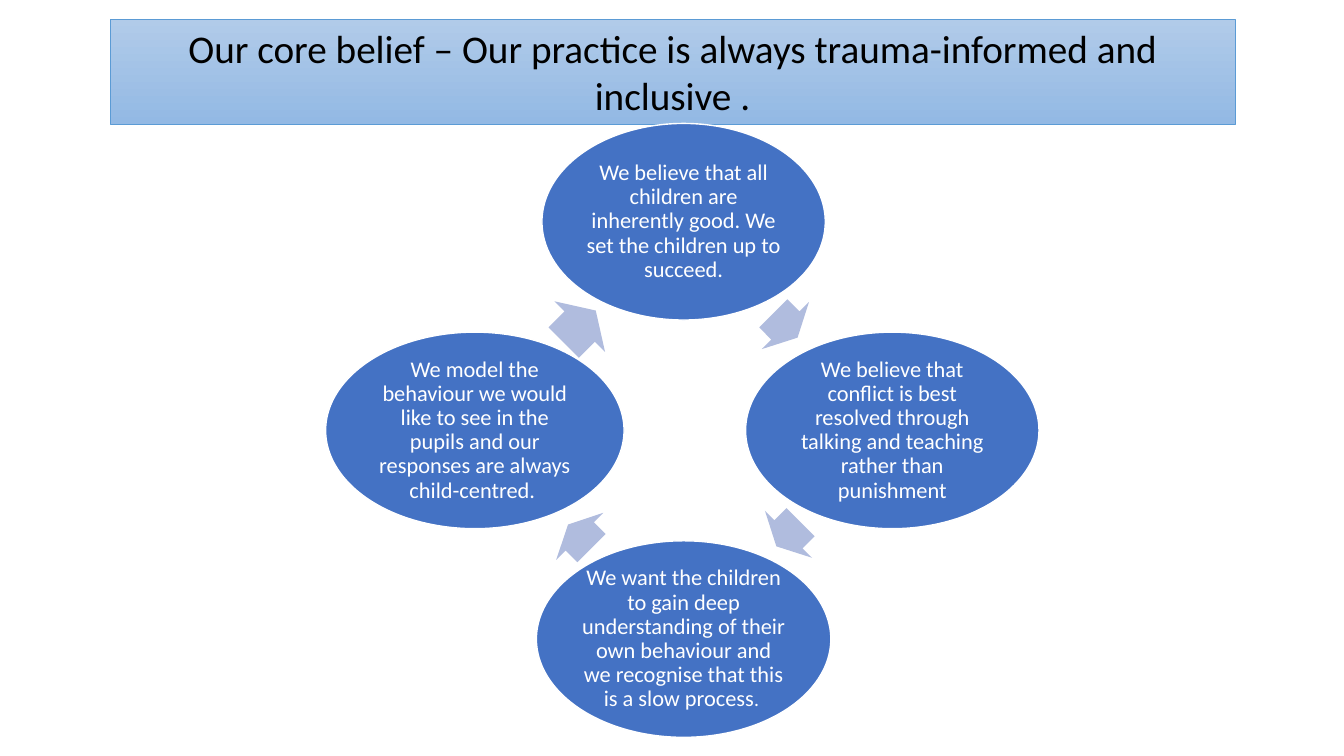
import math
from pptx import Presentation
from pptx.dml.color import RGBColor
from pptx.enum import shapes, text
from pptx.util import Inches, Pt

COLORS = {
    "oval": "4472C4", "arrow": "B0BCDE", "white": "FFFFFF", "black": "000000",
    "edge": "5B9BD5", "top": "B1CBE9", "base": "93B9E4",
}
HUB = (6.78, 4.27)
REACH = 2.07
BELIEFS = [
    (2.81, ["We believe that all children are inherently good. We set the children up to succeed."]),
    (2.91, ["We believe that conflict is best resolved through talking and teaching rather than punishment"]),
    (2.92, ["We want the children to gain deep understanding of their own behaviour and "
            "we recognise that this is a slow process", ". "]),
    (2.96, ["We model the behaviour we would like to see in the pupils and our responses "
            "are always child-centred. "]),
]
ARROWS = [
    (7.79, 3.23, 0.34, 0.66),
    (7.82, 5.3, 0.34, 0.66),
    (5.75, 5.32, 0.33, 0.66),
    (5.75, 3.24, 0.45, 0.71),
]


def tint(name):
    return RGBColor.from_string(COLORS[name])


def write(shape, parts, sizes=(16, 14), color="white", gap=0.9):
    frame = shape.text_frame
    frame.word_wrap = True
    frame.vertical_anchor = text.MSO_ANCHOR.MIDDLE
    para = frame.paragraphs[0]
    para.alignment = text.PP_ALIGN.CENTER
    para.line_spacing = gap
    para.space_before = Pt(0)
    for part, size in zip(parts, sizes):
        run = para.add_run()
        run.text = part
        run.font.name = "Calibri"
        run.font.size = Pt(size)
        run.font.color.rgb = tint(color)


def add_shape(slide, kind, mid, size, fill):
    (x, y), (w, h) = mid, size
    shape = slide.shapes.add_shape(
        kind, Inches(x - w / 2), Inches(y - h / 2), Inches(w), Inches(h))
    shape.shadow.inherit = False
    shape.fill.solid()
    shape.fill.fore_color.rgb = tint(fill)
    return shape


def add_oval(slide, turn, width, parts):
    angle = math.radians(turn)
    mid = HUB[0] + REACH * math.sin(angle), HUB[1] - REACH * math.cos(angle)
    oval = add_shape(slide, shapes.MSO_SHAPE.OVAL, mid, (width, 1.95), "oval")
    oval.line.color.rgb = tint("white")
    oval.line.width = Pt(1)
    frame = oval.text_frame
    frame.margin_left = frame.margin_right = Inches(0.02)
    frame.margin_top = frame.margin_bottom = Inches(0.02)
    write(oval, parts)


def add_arrow(slide, turn, x, y, w, h):
    arrow = add_shape(slide, shapes.MSO_SHAPE.RIGHT_ARROW, (x, y), (w, h), "arrow")
    arrow.line.fill.background()
    arrow.adjustments[0] = 0.6
    arrow.adjustments[1] = 0.5
    arrow.rotation = turn + 45


def set_title(slide):
    title = slide.shapes.title
    title.left, title.top = Inches(1.09), Inches(0.19)
    title.width, title.height = Inches(11.16), Inches(1.04)
    title.fill.gradient()
    title.fill.gradient_angle = 270
    for stop, name, place in zip(title.fill.gradient_stops, ("top", "base"), (0, 1)):
        stop.color.rgb = tint(name)
        stop.position = place
    title.line.color.rgb = tint("edge")
    title.line.width = Pt(0.5)
    title.text_frame.auto_size = text.MSO_AUTO_SIZE.SHAPE_TO_FIT_TEXT
    write(title, ["Our core belief – Our practice is always trauma-informed and inclusive ."],
          sizes=(28,), color="black", gap=1.0)


def main():
    deck = Presentation()
    deck.slide_width, deck.slide_height = Inches(13.33), Inches(7.5)
    slide = deck.slides.add_slide(deck.slide_layouts[5])
    set_title(slide)
    for step, ((width, parts), arrow) in enumerate(zip(BELIEFS, ARROWS)):
        add_oval(slide, step * 90, width, parts)
        add_arrow(slide, step * 90, *arrow)
    deck.save("out.pptx")


if __name__ == "__main__":
    main()
